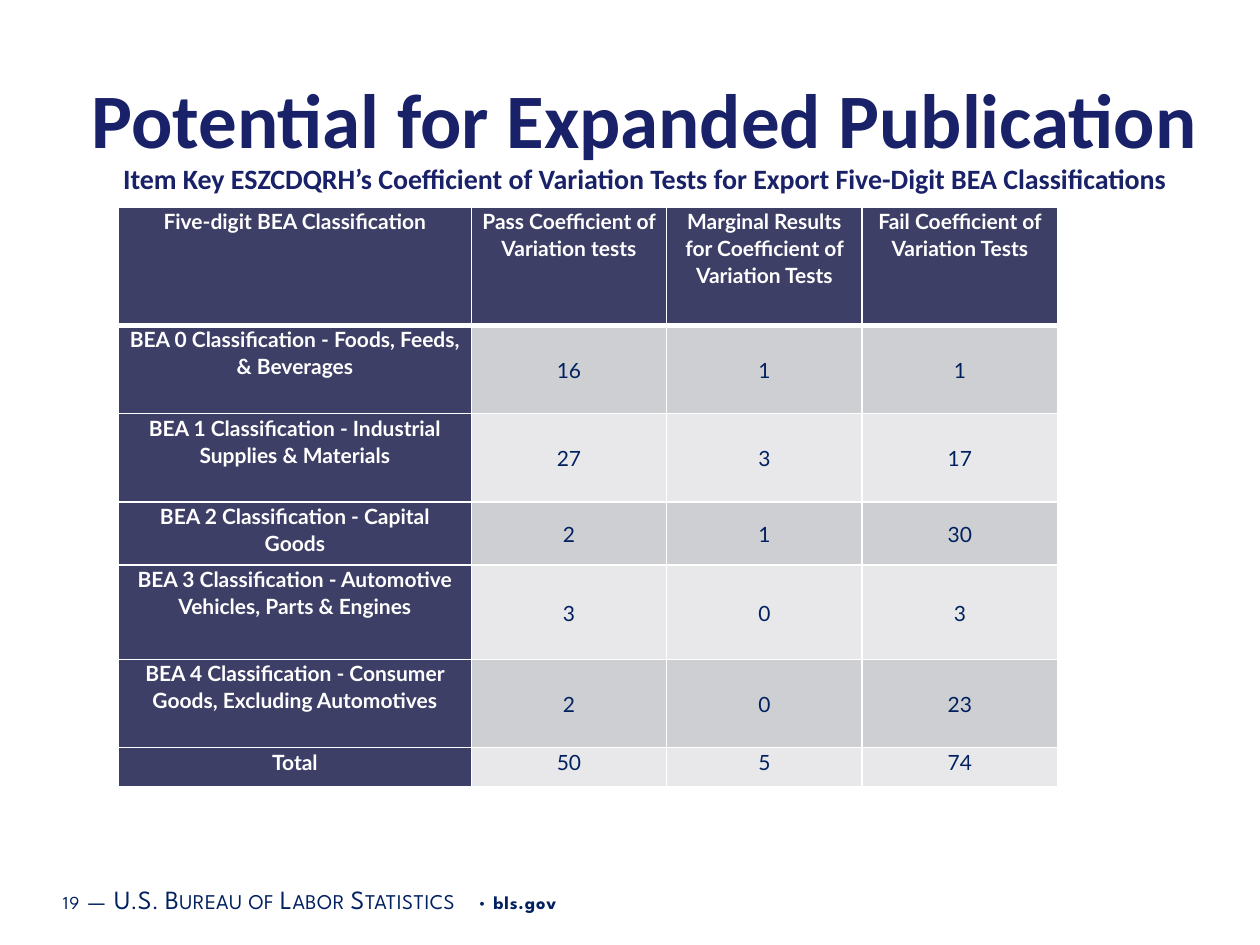
import pptx
import pptx.dml.color
import pptx.enum.text
import pptx.util
from lxml import etree
from pptx.oxml.ns import qn

Cm = pptx.util.Cm
Pt = pptx.util.Pt
ANCHOR = pptx.enum.text.MSO_ANCHOR
CENTER = pptx.enum.text.PP_ALIGN.CENTER

COLORS = {
    "title": "192168",
    "body": "002060",
    "header": "3E3F67",
    "band_dark": "CECFD3",
    "band_light": "E8E8EB",
    "white": "FFFFFF",
}

HEADINGS = [
    "Five-digit BEA Classification",
    "Pass Coefficient of Variation tests",
    "Marginal Results for Coefficient of Variation Tests",
    "Fail Coefficient of Variation Tests",
]
RESULTS = [
    ("BEA 0 Classification - Foods, Feeds, & Beverages", 16, 1, 1),
    ("BEA 1 Classification - Industrial Supplies & Materials", 27, 3, 17),
    ("BEA 2 Classification - Capital Goods", 2, 1, 30),
    ("BEA 3 Classification - Automotive Vehicles, Parts & Engines", 3, 0, 3),
    ("BEA 4 Classification - Consumer Goods, Excluding Automotives", 2, 0, 23),
    ("Total", 50, 5, 74),
]
COLUMN_WIDTHS = [7.11, 3.94, 3.94, 3.94]
ROW_HEIGHTS = [2.39, 1.78, 1.78, 1.27, 1.9, 1.78, 0.79]

# Text, size, letter spacing in hundredths of a point, small caps, bold
FOOTER_RUNS = [
    ("19", 10.5, 50, False, False),
    (" ", 16, 50, False, False),
    ("—", 15, 30, True, False),
    (" ", 16, 50, False, False),
    ("U.S. Bureau of Labor Statistics", 15, 30, True, False),
    (" • ", 10.5, 50, False, False),
    ("bls.gov", 10.5, 50, False, True),
]


class SlideBuilder:
    def __init__(self, slide):
        self.slide = slide
        self.title_font = "Calibri"
        self.table_font = "Lato"
        self.footer_font = "League Spartan"

    def color(self, name):
        return pptx.dml.color.RGBColor.from_string(COLORS[name])

    def set_font(self, font, name, color, bold=None, size=None):
        font.name = name
        font.color.rgb = self.color(color)
        font.bold = bold
        if size:
            font.size = Pt(size)

    def text_box(self, left, top, width, height, anchor):
        box = self.slide.shapes.add_textbox(Cm(left), Cm(top), Cm(width), Cm(height))
        frame = box.text_frame
        frame.word_wrap = True
        frame.vertical_anchor = anchor
        return frame

    def title(self, heading, subtitle):
        frame = self.text_box(1.27, 1.27, 23.47, 2.24, ANCHOR.TOP)
        frame.margin_top = Cm(0.38)
        paragraph = frame.paragraphs[0]
        paragraph.alignment = CENTER
        paragraph.line_spacing = 0.9
        self.set_font(paragraph.font, self.title_font, "title", True)
        for text, size in ((heading, 44), (subtitle, 16)):
            if paragraph.runs:
                paragraph.add_line_break()
            run = paragraph.add_run()
            run.text = text
            self.set_font(run.font, self.title_font, "title", True, size)

    def footer(self, runs):
        frame = self.text_box(1.09, 17.6, 16.08, 1.02, ANCHOR.MIDDLE)
        frame.margin_left = frame.margin_right = Cm(0.18)
        frame.margin_top = frame.margin_bottom = Cm(0.1)
        paragraph = frame.paragraphs[0]
        for text, size, spacing, small_caps, bold in runs:
            run = paragraph.add_run()
            run.text = text
            self.set_font(run.font, self.footer_font, "body", bold, size)
            properties = run._r.get_or_add_rPr()
            properties.set("spc", str(spacing))
            if small_caps:
                properties.set("cap", "small")

    def borders(self, cell, bottom_width):
        properties = cell._tc.get_or_add_tcPr()
        for side, width in (("L", 1), ("R", 1), ("T", 1), ("B", bottom_width)):
            line = etree.SubElement(properties, qn(f"a:ln{side}"), w=str(Pt(width)))
            fill = etree.SubElement(line, qn("a:solidFill"))
            etree.SubElement(fill, qn("a:srgbClr"), val=COLORS["white"])

    def cell(self, cell, text, fill, color, bold, anchor, bottom_width):
        cell.margin_left = cell.margin_right = Cm(0.18)
        cell.margin_top = cell.margin_bottom = 0
        cell.vertical_anchor = anchor
        self.borders(cell, bottom_width)
        cell.fill.solid()
        cell.fill.fore_color.rgb = self.color(fill)
        paragraph = cell.text_frame.paragraphs[0]
        paragraph.text = text
        paragraph.alignment = CENTER
        paragraph.line_spacing = 1.07
        self.set_font(paragraph.font, self.table_font, color, bold, 12)

    def table(self, left, top, rows, widths, heights):
        """Draw rows with a dark first row and column, and banded values."""
        table = self.slide.shapes.add_table(
            len(rows), len(widths), Cm(left), Cm(top), Cm(sum(widths)), Cm(sum(heights))
        ).table
        table.horz_banding = False
        table.first_row = False
        for column, width in zip(table.columns, widths):
            column.width = Cm(width)
        for row, height in zip(table.rows, heights):
            row.height = Cm(height)
        last_row = len(rows) - 1
        for row_index, values in enumerate(rows):
            band = "band_dark" if row_index % 2 else "band_light"
            bottom_width = 1 if row_index else 3
            for column_index, value in enumerate(values):
                cell = table.cell(row_index, column_index)
                if row_index == 0 or column_index == 0:
                    style = ("header", "white", True, ANCHOR.TOP)
                else:
                    anchor = ANCHOR.TOP if row_index == last_row else ANCHOR.MIDDLE
                    style = (band, "body", False, anchor)
                self.cell(cell, str(value), *style, bottom_width)


def main():
    presentation = pptx.Presentation()
    presentation.slide_width = Cm(25.4)
    presentation.slide_height = Cm(19.05)
    builder = SlideBuilder(presentation.slides.add_slide(presentation.slide_layouts[6]))
    builder.footer(FOOTER_RUNS)
    builder.title(
        "Potential for Expanded Publication",
        "Item Key ESZCDQRH’s Coefficient of Variation Tests"
        " for Export Five-Digit BEA Classifications",
    )
    builder.table(2.39, 4.17, [HEADINGS, *RESULTS], COLUMN_WIDTHS, ROW_HEIGHTS)
    presentation.save("out.pptx")


if __name__ == "__main__":
    main()
